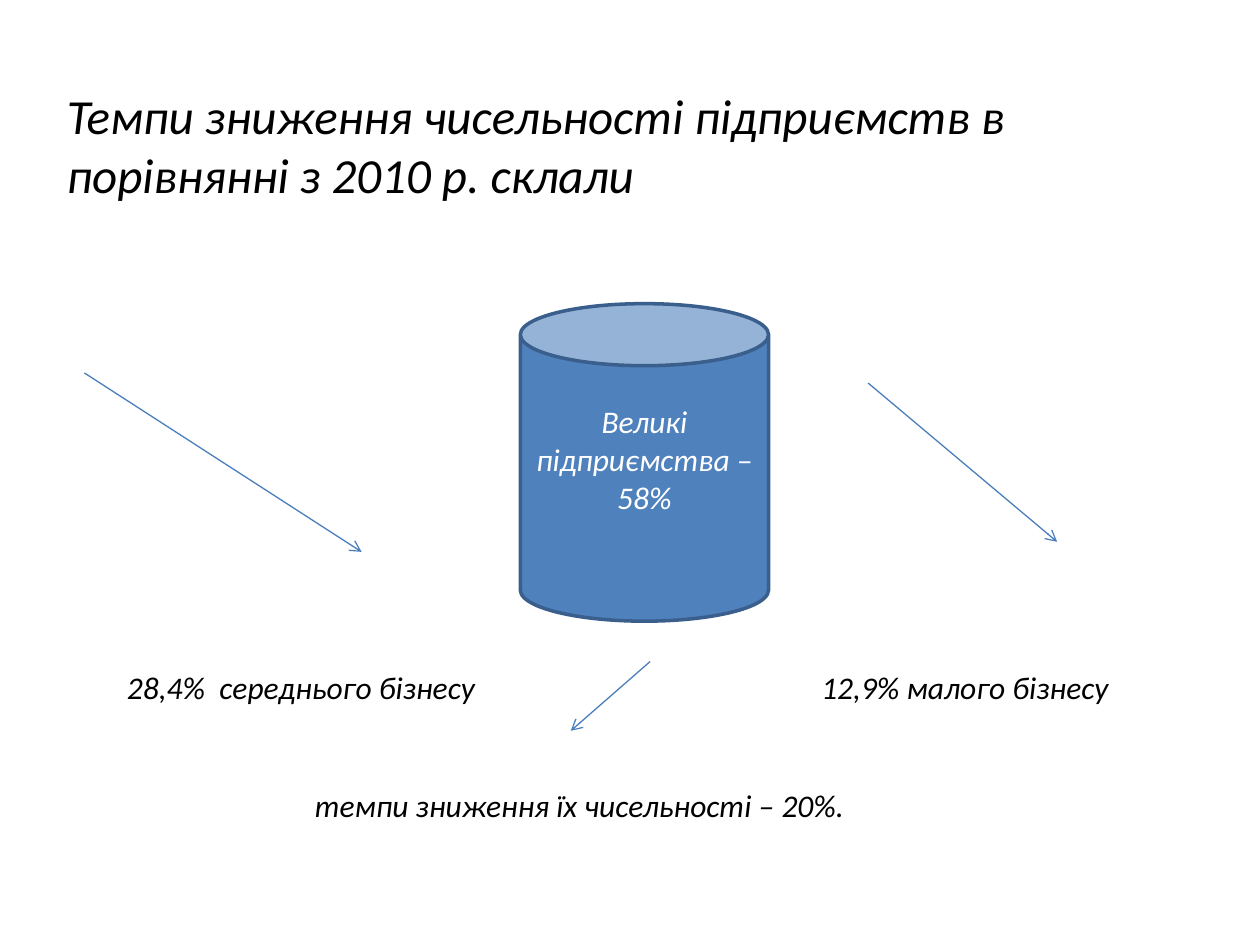
from lxml import etree
from pptx import Presentation
from pptx.dml.color import RGBColor
from pptx.enum import shapes, text
from pptx.oxml.ns import qn
from pptx.util import Inches, Pt

THEME = {
    "font": "Calibri",
    "title_size": 28,
    "body_size": 18,
    "ink": "000000",
    "on_fill": "FFFFFF",
    "fill": "4F81BD",
    "outline": "3A5F8C",
    "arrow": "4B7EBC",
}

TITLE = ("Темпи зниження чисельності підприємств в порівнянні з 2010 р. склали",
         (0.43, 0.52, 9, 1.25))
LARGE_BUSINESS = ("Великі підприємства – 58%", (4.13, 2.41, 1.97, 2.52))
LABELS = [
    ("28,4%  середнього бізнесу", (0.91, 5.25, 5, 0.4), True),
    ("12,9% малого бізнесу", (6.42, 5.25, 2.5, 0.4), False),
    ("темпи зниження їх чисельності – 20%.", (2.4, 6.19, 4.51, 0.4), False),
]
ARROWS = [
    ((0.67, 2.96), (2.87, 4.38)),
    ((6.89, 3.04), (8.39, 4.3)),
    ((5.16, 5.25), (4.53, 5.8)),
]


def color(name):
    return RGBColor.from_string(THEME[name])


def inches(values):
    return [Inches(value) for value in values]


def write(frame, words, size, ink, align, anchor):
    frame.vertical_anchor = anchor
    paragraph = frame.paragraphs[0]
    paragraph.alignment = align
    run = paragraph.add_run()
    run.text = words
    run.font.name = THEME["font"]
    run.font.size = Pt(THEME[size])
    run.font.italic = True
    run.font.color.rgb = color(ink)


def add_title(slide, words, box):
    title = slide.shapes.title
    title.left, title.top, title.width, title.height = inches(box)
    title.text_frame.word_wrap = True
    title.text_frame.auto_size = text.MSO_AUTO_SIZE.NONE
    write(title.text_frame, words, "title_size", "ink",
          text.PP_ALIGN.LEFT, text.MSO_ANCHOR.MIDDLE)


def add_arrow(slide, start, end):
    arrow = slide.shapes.add_connector(
        shapes.MSO_CONNECTOR.STRAIGHT, *inches(start + end))
    arrow.line.color.rgb = color("arrow")
    arrow.line.width = Pt(0.75)
    etree.SubElement(arrow.line._get_or_add_ln(), qn("a:tailEnd"), type="arrow")
    etree.SubElement(arrow._element.spPr, qn("a:effectLst"))


def add_label(slide, words, box, wrap):
    label = slide.shapes.add_textbox(*inches(box))
    label.text_frame.word_wrap = wrap
    label.text_frame.auto_size = text.MSO_AUTO_SIZE.SHAPE_TO_FIT_TEXT
    write(label.text_frame, words, "body_size", "ink",
          text.PP_ALIGN.LEFT, text.MSO_ANCHOR.TOP)


def add_can(slide, words, box):
    can = slide.shapes.add_shape(shapes.MSO_SHAPE.CAN, *inches(box))
    can.shadow.inherit = False
    can.fill.solid()
    can.fill.fore_color.rgb = color("fill")
    can.line.color.rgb = color("outline")
    can.line.width = Pt(2)
    can.text_frame.word_wrap = True
    can.text_frame.margin_bottom = Inches(0.35)
    write(can.text_frame, words, "body_size", "on_fill",
          text.PP_ALIGN.CENTER, text.MSO_ANCHOR.MIDDLE)


def main():
    presentation = Presentation()
    presentation.slide_width, presentation.slide_height = inches((10, 7.5))
    slide = presentation.slides.add_slide(presentation.slide_layouts[5])
    add_title(slide, *TITLE)
    for start, end in ARROWS:
        add_arrow(slide, start, end)
    for label in LABELS:
        add_label(slide, *label)
    add_can(slide, *LARGE_BUSINESS)
    presentation.save("out.pptx")


if __name__ == "__main__":
    main()
